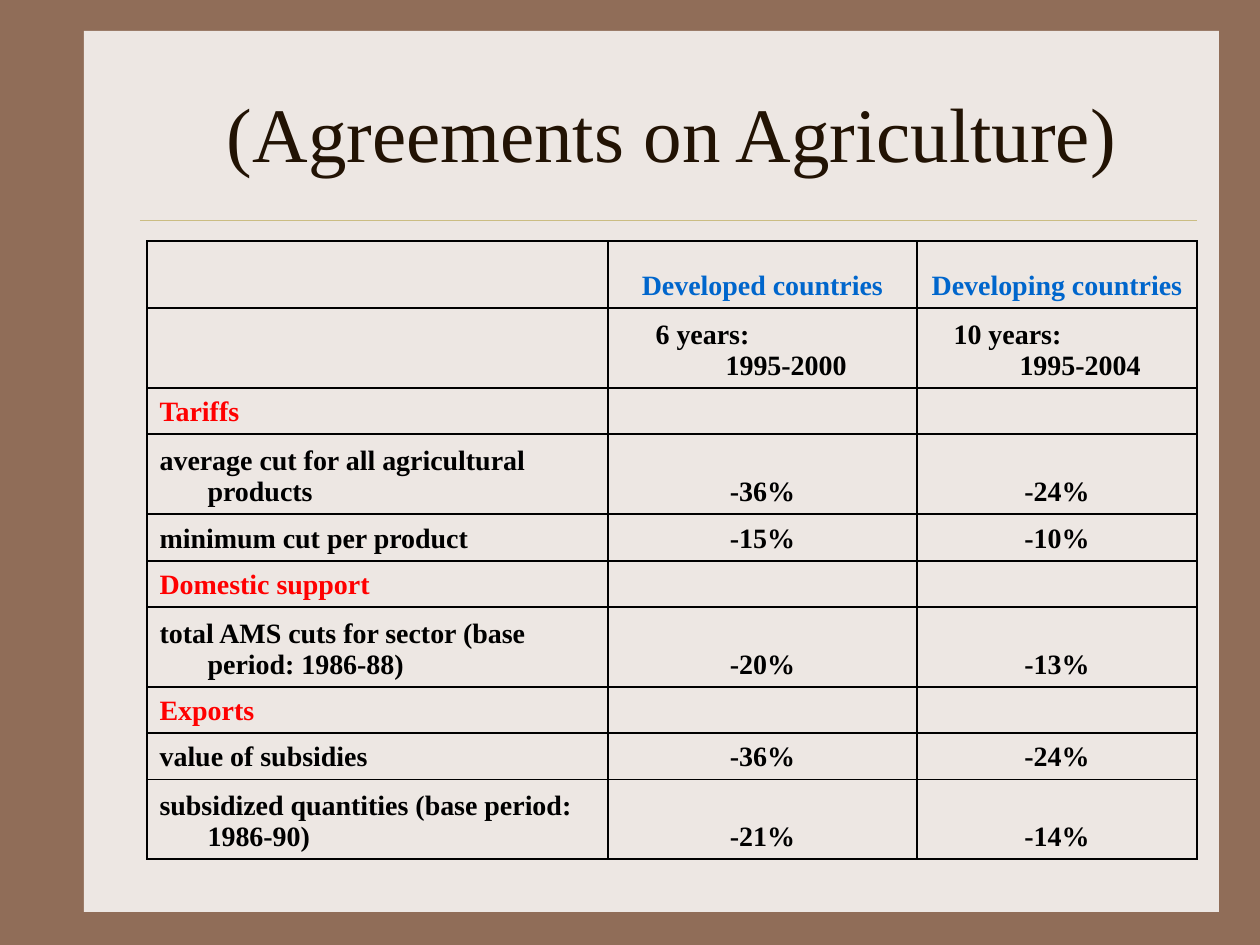
from dataclasses import dataclass

from lxml.etree import SubElement
from pptx import Presentation
from pptx.dml.color import RGBColor
from pptx.enum.shapes import MSO_CONNECTOR as Connector, MSO_SHAPE as Shape
from pptx.enum.text import MSO_ANCHOR as Anchor, PP_ALIGN as Align
from pptx.oxml.ns import qn
from pptx.util import Emu, Pt

TITLE = "(Agreements on Agriculture)"
HEADERS = ["", "Developed countries", "Developing countries"]
PERIODS = ["", "6 years:\v1995-2000", "10 years:\v1995-2004"]
# Section name -> (commitment, developed, developing)
SECTIONS = {
    "Tariffs": [
        ("average cut for all agricultural products", "-36%", "-24%"),
        ("minimum cut per product", "-15%", "-10%"),
    ],
    "Domestic support": [
        ("total AMS cuts for sector (base period: 1986-88)", "-20%", "-13%"),
    ],
    "Exports": [
        ("value of subsidies", "-36%", "-24%"),
        ("subsidized quantities (base period: 1986-90)", "-21%", "-14%"),
    ],
}


@dataclass(frozen=True)
class Theme:
    font: str = "Times New Roman"
    frame: str = "906D58"
    panel: str = "EDE7E3"
    rule: str = "CBBD83"
    title: str = "221304"
    header: str = "0066CC"
    section: str = "FF0000"
    body: str = "000000"
    title_size: int = 44
    body_size: int = 16


THEME = Theme()
SLIDE_SIZE = (1260, 945)
PANEL_BOX = (84, 31, 1135, 881)
RULE_LEFT, RULE_RIGHT, RULE_Y = 140, 1197, 220
TITLE_BOX = (147, 53, 1050, 157)
TABLE_LEFT, TABLE_TOP = 147, 241
COLUMN_WIDTHS = [461, 309, 280]
ROW_HEIGHTS = [67, 74, 44, 74, 47, 44, 74, 44, 44, 74]
HANGING = (48, -48)
PERIOD_INDENTS = [HANGING, (105, -70), (90, -66)]


def px(length):
    return Emu(round(length * 914400 / 126))


def box(lengths):
    return [px(length) for length in lengths]


def rgb(value):
    return RGBColor.from_string(value)


def write(frame, text, *, size, color, bold=False, align=Align.LEFT, indent=None):
    paragraph = frame.paragraphs[0]
    paragraph.text = text
    paragraph.alignment = align
    if indent:
        margin, first_line = indent
        properties = paragraph._p.get_or_add_pPr()
        properties.set("marL", str(px(margin)))
        properties.set("indent", str(px(first_line)))
    for run in paragraph.runs:
        run.font.name = THEME.font
        run.font.size = Pt(size)
        run.font.bold = bold
        run.font.color.rgb = rgb(color)
    if not text:  # an empty cell still needs the type size to keep its row low
        SubElement(paragraph._p, qn("a:endParaRPr"), sz=str(size * 100))


def add_borders(cell):
    properties = cell._tc.get_or_add_tcPr()
    for side in ("lnL", "lnR", "lnT", "lnB"):
        line = SubElement(properties, qn(f"a:{side}"), w=str(Pt(1)))
        fill = SubElement(line, qn("a:solidFill"))
        SubElement(fill, qn("a:srgbClr"), val=THEME.body)


def table_rows():
    """Yield the texts and the text colour of each row."""
    yield HEADERS, THEME.header
    yield PERIODS, THEME.body
    for section, commitments in SECTIONS.items():
        yield [section, "", ""], THEME.section
        for commitment in commitments:
            yield commitment, THEME.body


def add_backdrop(slide):
    background = slide.background.fill
    background.solid()
    background.fore_color.rgb = rgb(THEME.frame)

    panel = slide.shapes.add_shape(Shape.RECTANGLE, *box(PANEL_BOX))
    panel.shadow.inherit = False
    panel.fill.solid()
    panel.fill.fore_color.rgb = rgb(THEME.panel)
    panel.line.fill.background()

    rule = slide.shapes.add_connector(
        Connector.STRAIGHT, *box((RULE_LEFT, RULE_Y, RULE_RIGHT, RULE_Y)))
    rule.line.color.rgb = rgb(THEME.rule)
    rule.line.width = Pt(0.25)
    SubElement(rule._element.spPr, qn("a:effectLst"))


def add_title(slide):
    frame = slide.shapes.add_textbox(*box(TITLE_BOX)).text_frame
    frame.word_wrap = True
    frame.vertical_anchor = Anchor.MIDDLE
    write(frame, TITLE, size=THEME.title_size, color=THEME.title, align=Align.CENTER)


def add_commitments(slide):
    table = slide.shapes.add_table(
        len(ROW_HEIGHTS), len(COLUMN_WIDTHS),
        *box((TABLE_LEFT, TABLE_TOP, sum(COLUMN_WIDTHS), sum(ROW_HEIGHTS)))).table
    table.first_row = table.horz_banding = False
    for column, width in zip(table.columns, COLUMN_WIDTHS):
        column.width = px(width)
    for row, height, (texts, color) in zip(table.rows, ROW_HEIGHTS, table_rows()):
        row.height = px(height)
        is_period = texts is PERIODS
        for index, (cell, text) in enumerate(zip(row.cells, texts)):
            add_borders(cell)
            cell.fill.background()
            cell.vertical_anchor = Anchor.BOTTOM
            write(cell.text_frame, text, size=THEME.body_size, color=color, bold=True,
                  align=Align.CENTER if index and not is_period else Align.LEFT,
                  indent=PERIOD_INDENTS[index] if is_period else HANGING)


def main():
    deck = Presentation()
    deck.slide_width, deck.slide_height = box(SLIDE_SIZE)
    slide = deck.slides.add_slide(deck.slide_layouts[6])
    add_backdrop(slide)
    add_title(slide)
    add_commitments(slide)
    deck.save("out.pptx")


if __name__ == "__main__":
    main()
